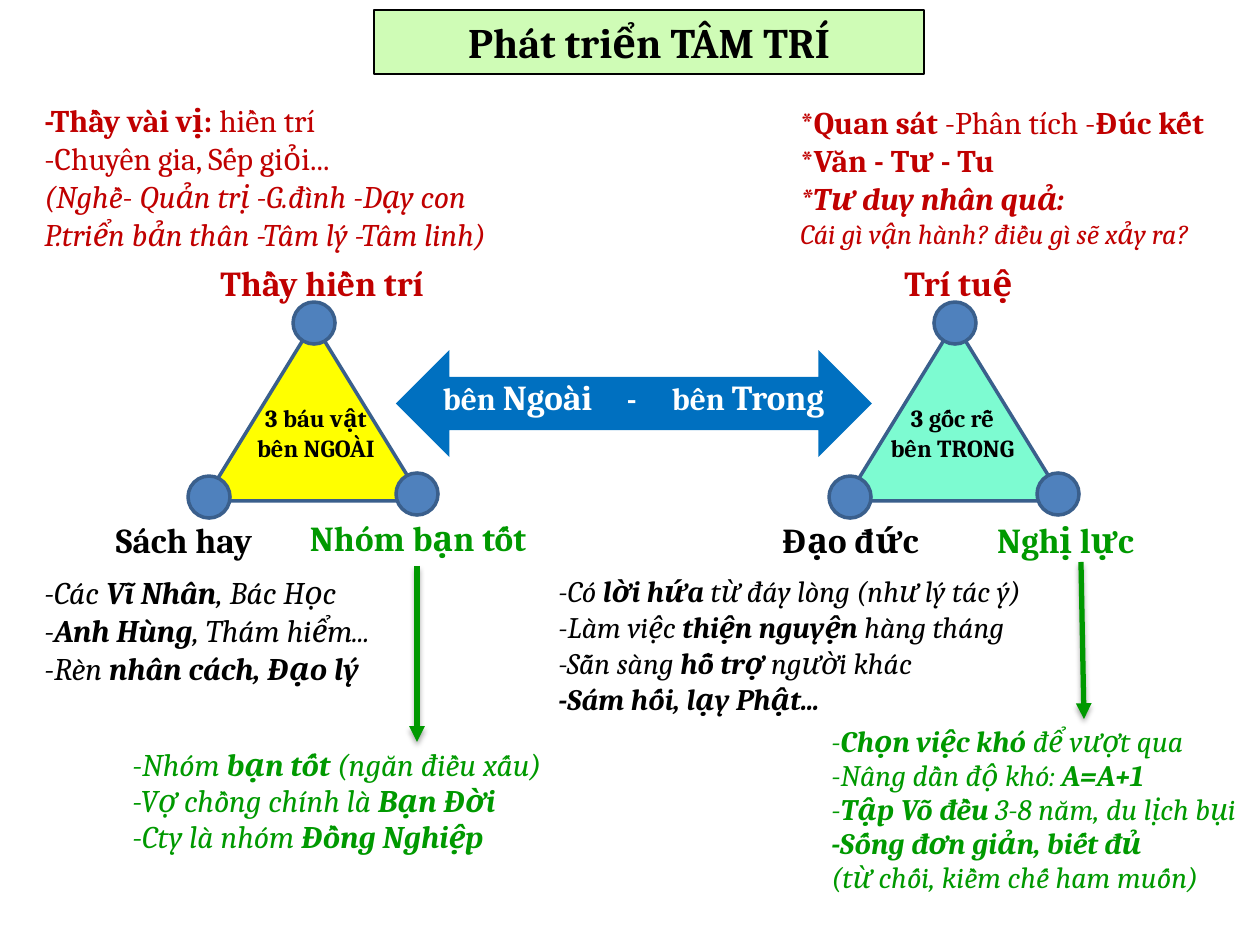
from dataclasses import dataclass

from lxml import etree
from pptx import Presentation
from pptx.dml.color import RGBColor
from pptx.enum.shapes import MSO_CONNECTOR as Connector, MSO_SHAPE as Shape
from pptx.enum.text import MSO_ANCHOR as Anchor, MSO_AUTO_SIZE as AutoSize, PP_ALIGN as Align
from pptx.oxml.ns import qn
from pptx.util import Pt

PX = 914400 / 126


@dataclass(frozen=True)
class Theme:
    font: str = "Cambria"
    black: str = "000000"
    white: str = "FFFFFF"
    red: str = "C00000"
    green: str = "009900"
    blue: str = "0070C0"
    knob: str = "4F81BD"
    edge: str = "3A5F8C"
    yellow: str = "FFFF00"
    mint: str = "7DFBD1"
    lime: str = "CFFCB6"
    title: int = 24
    heading: int = 20
    body: int = 18
    compact: int = 17
    note: int = 16
    core: int = 14


THEME = Theme()

TITLE = "Phát triển TÂM TRÍ"
TITLE_AT = (374, 10, 550, 64)
AXIS_AT = (396, 350, 476, 107)
AXIS_TEXT_AT = (374, 374, 518, 50)
AXIS_WORDS = [("bên ", THEME.body), ("Ngoài", THEME.heading),
              ("\t-\tbên ", THEME.body), ("Trong", THEME.heading)]
AXIS_INSET = 69
AXIS_TABS = (184, 229)

# Triangle left edge and fill; circles sit at fixed offsets from that edge
TRIANGLES = [(204, THEME.yellow), (845, THEME.mint)]
TRIANGLE_TOP, TRIANGLE_W, TRIANGLE_H = 323, 219, 178
KNOB = 42
KNOB_OFFSETS = [(89, -21), (-16, 153), (192, 150)]

# Place, colour, size, line spacing, lines
LABELS = [
    ((184, 260, 276, 50), THEME.red, THEME.heading, 0.9, ["Thầy hiền trí"]),
    ((883, 255, 151, 55), THEME.red, THEME.heading, 1, ["Trí tuệ"]),
    ((95, 512, 178, 55), THEME.black, THEME.heading, 1, ["Sách hay"]),
    ((289, 510, 258, 55), THEME.green, THEME.heading, 1, ["Nhóm bạn tốt"]),
    ((765, 512, 171, 55), THEME.black, THEME.heading, 1, ["Đạo đức"]),
    ((966, 512, 199, 55), THEME.green, THEME.heading, 1, ["Nghị lực"]),
    ((236, 397, 160, 72), THEME.black, THEME.core, 1, ["3 báu vật", "bên NGOÀI"]),
    ((871, 397, 163, 72), THEME.black, THEME.core, 1, ["3 gốc rễ", "bên TRONG"]),
]

# Place, colour, line spacing, lines of (text, size, italic); "|" switches bold
NOTES = [
    ((32, 95, 575, 165), THEME.red, 1, [
        ("|-Thầy vài vị: |hiền trí", THEME.body, False),
        ("-Chuyên gia, Sếp giỏi...", THEME.body, False),
        ("(Nghề- Quản trị -G.đình -Dạy con", THEME.body, True),
        ("P.triển bản thân -Tâm lý -Tâm linh)", THEME.body, True)]),
    ((788, 97, 472, 165), THEME.red, 1, [
        ("*|Quan sát |-Phân tích -|Đúc kết", THEME.body, False),
        ("*|Văn - Tư - Tu", THEME.body, False),
        ("|*Tư duy nhân quả:", THEME.body, True),
        ("Cái gì vận hành? điều gì sẽ xảy ra?", THEME.note, True)]),
    ((32, 567, 415, 127), THEME.black, 1, [
        ("-Các |Vĩ Nhân|, Bác Học", THEME.body, True),
        ("-|Anh Hùng|, Thám hiểm...", THEME.body, True),
        ("-Rèn |nhân cách, Đạo lý", THEME.body, True)]),
    ((546, 567, 495, 158), THEME.black, 1, [
        ("-Có |lời hứa |từ đáy lòng (như lý tác ý)", THEME.compact, True),
        ("-Làm việc |thiện nguyện |hàng tháng", THEME.compact, True),
        ("-Sẵn sàng |hỗ trợ |người khác", THEME.compact, True),
        ("|-Sám hối, lạy Phật...", THEME.compact, True)]),
    ((120, 742, 498, 121), THEME.green, 0.95, [
        ("-Nhóm |bạn tốt |(ngăn điều xấu)", THEME.body, True),
        ("-Vợ chồng chính là |Bạn Đời", THEME.body, True),
        ("-Cty là nhóm |Đồng Nghiệp", THEME.body, True)]),
    ((819, 719, 441, 184), THEME.green, 0.95, [
        ("-|Chọn việc khó |để vượt qua", THEME.compact, True),
        ("-Nâng dần độ khó: |A=A+1", THEME.compact, True),
        ("-|Tập Võ đều |3-8 năm, du lịch bụi", THEME.compact, True),
        ("|-Sống đơn giản, biết đủ", THEME.compact, True),
        ("(từ chối, kiềm chế ham muốn)", THEME.compact, True)]),
]

ARROWS = [(417, 566, 417, 742), (1081, 562, 1084, 719)]


def px(*values):
    return [round(value * PX) for value in values]


def add_span(para, text, size, color, bold=False, italic=False):
    span = para.add_run()
    span.text = text
    values = {"name": THEME.font, "size": Pt(size), "bold": bold, "italic": italic}
    for name, value in values.items():
        setattr(span.font, name, value)
    span.font.color.rgb = RGBColor.from_string(color)


def add_paragraphs(frame, count, align, spacing):
    paras = [frame.paragraphs[0]] + [frame.add_paragraph() for _ in range(count - 1)]
    for para in paras:
        para.alignment = align
        para.line_spacing = spacing
    return paras


def add_box(page, place):
    frame = page.shapes.add_textbox(*px(*place)).text_frame
    frame.word_wrap = True
    frame.auto_size = AutoSize.SHAPE_TO_FIT_TEXT
    return frame


def add_solid(page, kind, place, fill, edge=None, width=2):
    solid = page.shapes.add_shape(kind, *px(*place))
    solid.shadow.inherit = False
    solid.fill.solid()
    solid.fill.fore_color.rgb = RGBColor.from_string(fill)
    if edge:
        solid.line.color.rgb = RGBColor.from_string(edge)
        solid.line.width = Pt(width)
    else:
        solid.line.fill.background()
    return solid


def add_triangle(page, left, fill):
    place = (left, TRIANGLE_TOP, TRIANGLE_W, TRIANGLE_H)
    add_solid(page, Shape.ISOSCELES_TRIANGLE, place, fill, THEME.edge)
    for dx, dy in KNOB_OFFSETS:
        place = (left + dx, TRIANGLE_TOP + dy, KNOB, KNOB)
        add_solid(page, Shape.OVAL, place, THEME.knob, THEME.edge)


def add_axis(page):
    add_solid(page, Shape.LEFT_RIGHT_ARROW, AXIS_AT, THEME.blue)
    frame = add_box(page, AXIS_TEXT_AT)
    frame.margin_left, = px(AXIS_INSET)
    para, = add_paragraphs(frame, 1, Align.LEFT, 0.9)
    tabs = etree.SubElement(para._p.get_or_add_pPr(), qn("a:tabLst"))
    for stop in px(*AXIS_TABS):
        etree.SubElement(tabs, qn("a:tab"), pos=str(stop), algn="l")
    for text, size in AXIS_WORDS:
        add_span(para, text, size, THEME.white, bold=True)


def add_arrow(page, ends):
    arrow = page.shapes.add_connector(Connector.STRAIGHT, *px(*ends))
    arrow.line.color.rgb = RGBColor.from_string(THEME.green)
    arrow.line.width = Pt(3)
    etree.SubElement(arrow.line._get_or_add_ln(), qn("a:tailEnd"), type="triangle")
    effects = etree.SubElement(arrow._element.spPr, qn("a:effectLst"))
    shadow = etree.SubElement(effects, qn("a:outerShdw"), blurRad=str(Pt(3.1)),
                              dist=str(Pt(1.8)), dir="5400000", rotWithShape="0")
    color = etree.SubElement(shadow, qn("a:srgbClr"), val=THEME.black)
    etree.SubElement(color, qn("a:alpha"), val="35000")


def main():
    deck = Presentation()
    deck.slide_width, deck.slide_height = px(1260, 945)
    page = deck.slides.add_slide(deck.slide_layouts[6])

    for left, fill in TRIANGLES:
        add_triangle(page, left, fill)
    add_axis(page)

    banner = add_solid(page, Shape.RECTANGLE, TITLE_AT, THEME.lime, THEME.black, 0.75)
    banner.text_frame.vertical_anchor = Anchor.MIDDLE
    para, = add_paragraphs(banner.text_frame, 1, Align.CENTER, 1)
    add_span(para, TITLE, THEME.title, THEME.black, bold=True)

    for place, color, size, spacing, lines in LABELS:
        paras = add_paragraphs(add_box(page, place), len(lines), Align.CENTER, spacing)
        for para, text in zip(paras, lines):
            add_span(para, text, size, color, bold=True)

    for place, color, spacing, lines in NOTES:
        paras = add_paragraphs(add_box(page, place), len(lines), Align.LEFT, spacing)
        for para, (text, size, italic) in zip(paras, lines):
            for index, part in enumerate(text.split("|")):
                if part:
                    add_span(para, part, size, color, index % 2 == 1, italic)

    for ends in ARROWS:
        add_arrow(page, ends)
    deck.save("out.pptx")


if __name__ == "__main__":
    main()
